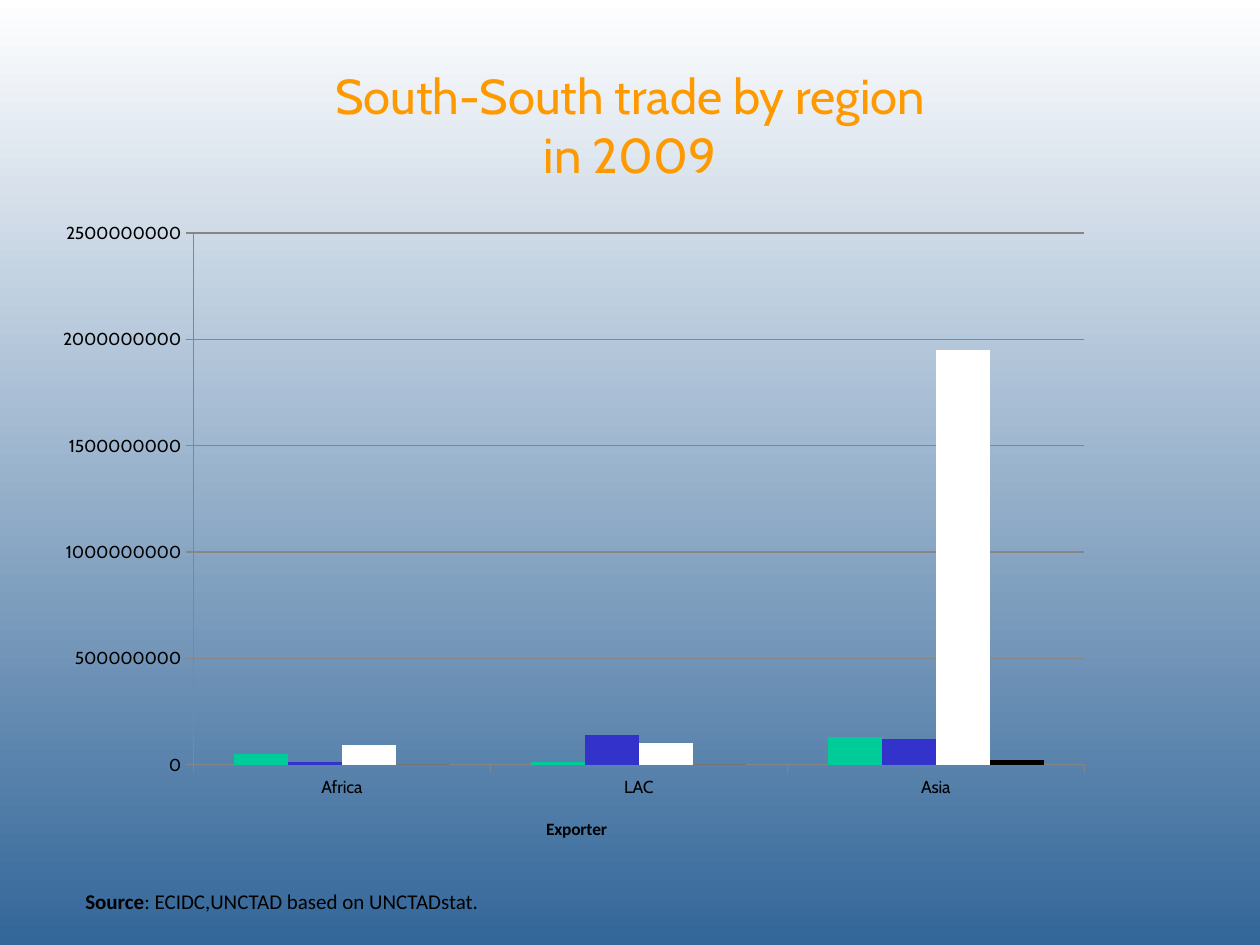
from lxml.etree import SubElement
from pptx import Presentation
from pptx.chart.data import CategoryChartData
from pptx.dml.color import RGBColor
from pptx.enum.chart import XL_CHART_TYPE as Kind, XL_TICK_MARK as Tick
from pptx.enum.text import MSO_ANCHOR as Anchor, MSO_AUTO_SIZE as Auto, PP_ALIGN as Align
from pptx.oxml.ns import qn
from pptx.util import Cm, Pt

THEME = {
    "sky": "FFFFFF", "sea": "336699", "title": "FF9900", "ink": "000000", "line": "868686",
    "bars": ["00CC99", "3333CC", "FFFFFF", "000000"],
    "head": "Cabin", "body": "Calibri",
    "big": Pt(28), "note": Pt(12), "small": Pt(10),
}


def style(font, face, size, color, bold=False):
    font.name, font.size, font.bold = face, size, bold
    font.color.rgb = RGBColor.from_string(THEME[color])


def place(parent, index, **marks):
    """Give a chart part a manual layout, as its child at index."""
    for old in parent.findall(qn("c:layout")):
        parent.remove(old)
    layout = SubElement(parent, qn("c:layout"))
    parent.insert(index, layout)
    manual = SubElement(layout, qn("c:manualLayout"))
    for tag, val in marks.items():
        SubElement(manual, qn(f"c:{tag}")).set("val", str(val))


deck = Presentation()
deck.slide_width, deck.slide_height = Cm(25.4), Cm(19.05)
slide = deck.slides.add_slide(deck.slide_layouts[5])

# Background, white at the top
fill = slide.background.fill
fill.gradient()
fill.gradient_angle = 270
for stop, name, pos in zip(fill.gradient_stops, ("sky", "sea"), (0, 1)):
    stop.color.rgb = RGBColor.from_string(THEME[name])
    stop.position = pos

# Title
title = slide.shapes.title
title.left, title.top, title.width, title.height = Cm(1.9), Cm(0.91), Cm(21.6), Cm(3.18)
frame = title.text_frame
frame.vertical_anchor = Anchor.MIDDLE
frame.auto_size = Auto.NONE
para = frame.paragraphs[0]
para.alignment = Align.CENTER
for row, text in enumerate(("South-South trade by region", "in 2009")):
    if row:
        para.add_line_break()
    run = para.add_run()
    run.text = text
    style(run.font, THEME["head"], THEME["big"], "title")

# Chart
data = CategoryChartData(number_format="General")
data.categories = ["Africa", "LAC", "Asia"]
trade = [
    (50_000_000, 10_000_000, 130_000_000),
    (10_000_000, 140_000_000, 120_000_000),
    (90_000_000, 100_000_000, 1_950_000_000),
    (0, 0, 20_000_000),
]
for num, vals in enumerate(trade, 1):
    data.add_series(f"Series {num}", vals)
chart = slide.shapes.add_chart(
    Kind.COLUMN_CLUSTERED, Cm(1.27), Cm(4.45), Cm(22.86), Cm(12.57), data).chart
chart.has_legend = chart.has_title = False
style(chart.font, THEME["head"], THEME["small"], "ink")

plot = chart.plots[0]
plot.gap_width, plot.overlap, plot.vary_by_categories = 150, 0, False
for series, color in zip(plot.series, THEME["bars"]):
    series.format.fill.solid()
    series.format.fill.fore_color.rgb = RGBColor.from_string(color)
    series.invert_if_negative = False

cat, val = chart.category_axis, chart.value_axis
val.minimum_scale, val.maximum_scale, val.major_unit = 0, 2_500_000_000, 500_000_000
val.has_major_gridlines = True
for axis in (cat, val):
    axis.major_tick_mark = Tick.OUTSIDE
for part in (cat, val, val.major_gridlines):
    part.format.line.width = Pt(0.75)
    part.format.line.color.rgb = RGBColor.from_string(THEME["line"])

label = cat.axis_title
run = label.text_frame.paragraphs[0].add_run()
run.text = "Exporter"
style(run.font, THEME["body"], THEME["small"], "ink", True)
place(label._element, 1, xMode="edge", yMode="edge", x=0.42, y=0.96)
area = chart._chartSpace.chart.plotArea
place(area, 0, layoutTarget="inner", xMode="edge", yMode="edge",
      x=0.11, y=0.02, w=0.79, h=0.86)

# Source line
box = slide.shapes.add_textbox(Cm(1.47), Cm(17.78), Cm(22.66), Cm(0.77))
frame = box.text_frame
frame.word_wrap = True
frame.auto_size = Auto.SHAPE_TO_FIT_TEXT
para = frame.paragraphs[0]
for text, bold in (("Source", True), (": ECIDC,UNCTAD based on UNCTADstat.", False)):
    run = para.add_run()
    run.text = text
    style(run.font, THEME["body"], THEME["note"], "ink", bold)

deck.save("out.pptx")
